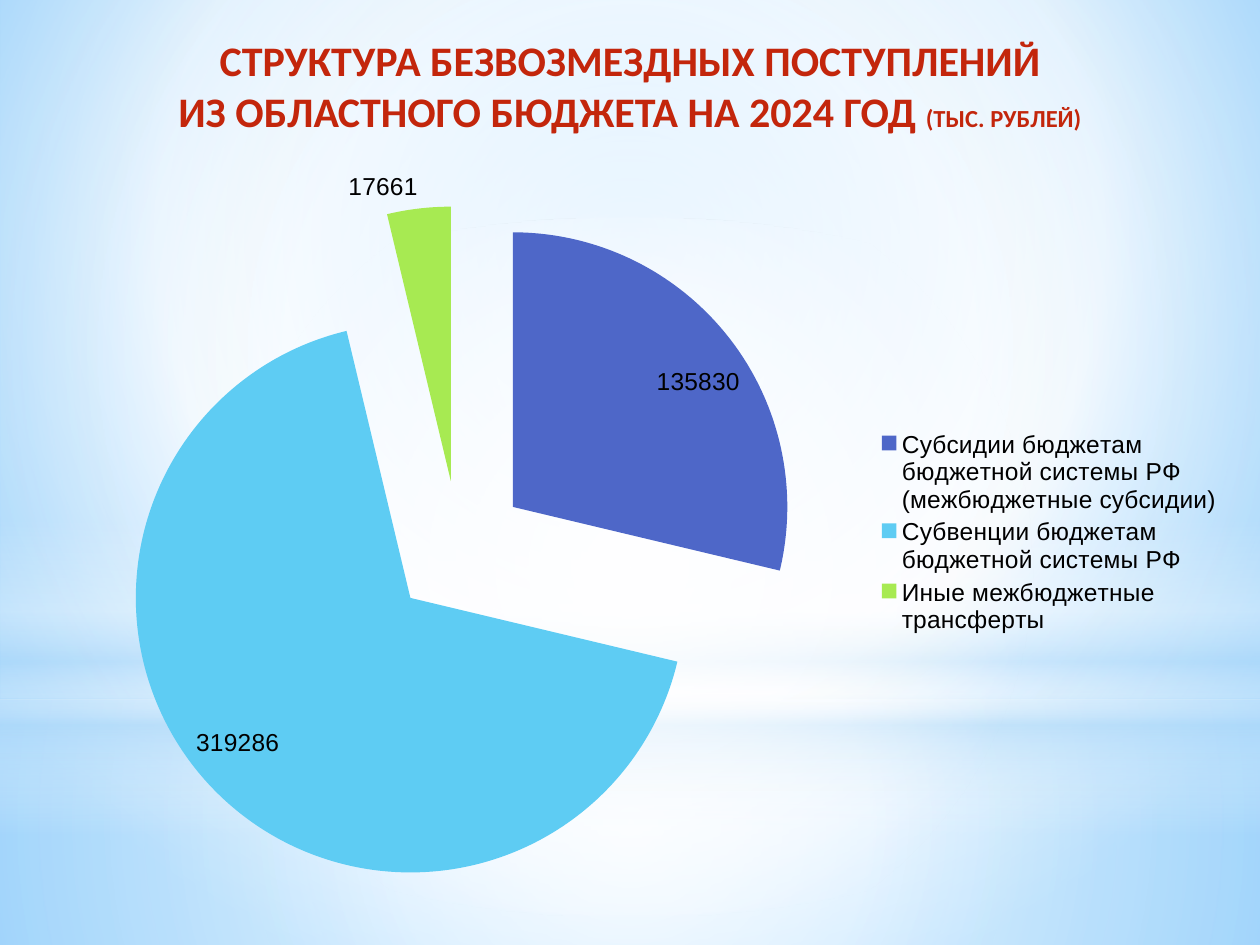
from dataclasses import dataclass
from lxml.etree import SubElement as Sub
from pptx import Presentation
from pptx.chart.data import CategoryChartData as Data
from pptx.dml.color import RGBColor as RGB
from pptx.enum.chart import XL_CHART_TYPE as Kind, XL_LABEL_POSITION as Spot
from pptx.enum.chart import XL_LEGEND_POSITION as Side
from pptx.enum.shapes import MSO_SHAPE as Form
from pptx.enum.text import MSO_ANCHOR as Anchor, MSO_AUTO_SIZE as Fit, PP_ALIGN as Align
from pptx.oxml import parse_xml
from pptx.oxml.ns import nsdecls, qn
from pptx.util import Inches, Pt


@dataclass(frozen=True)
class Theme:
    head: str = "Calibri"
    body: str = "Arial"
    red: str = "C3260C"
    ink: str = "000000"
    white: str = "FFFFFF"
    mist: str = "B4DCFA"
    sky: str = "9ED5FF"
    deep: str = "5BB9FF"
    slices: tuple = ("4E67C8", "5ECCF3", "A7EA52")
    big: int = 24
    base: int = 18
    small: int = 14


LOOK = Theme()
WIDE, HIGH = Inches(10), Inches(7.5)
MID = (50, 50, 50, 50)
SPLIT = 0.74


def place(box):
    x, y, w, h = box
    return [round(n) for n in (x * WIDE, y * HIGH, w * WIDE, h * HIGH)]


def blend(owner, stops, to=None):
    grad = parse_xml(f'<a:gradFill rotWithShape="1" {nsdecls("a")}/>')
    marks = Sub(grad, qn("a:gsLst"))
    for pos, color, *alpha in stops:
        stop = Sub(marks, qn("a:gs"), pos=str(pos * 1000))
        tone = Sub(stop, qn("a:srgbClr"), val=color)
        if alpha:
            Sub(tone, qn("a:alpha"), val=str(alpha[0] * 1000))
    if to:
        way = Sub(grad, qn("a:path"), {"path": "circle"})
        Sub(way, qn("a:fillToRect"), {k: str(v * 1000) for k, v in zip("ltrb", to)})
    else:
        Sub(grad, qn("a:lin"), ang="5400000", scaled="0")
    solid = owner.find(qn("a:solidFill"))
    owner.replace(solid, grad)


def style(font, size, name=LOOK.body, color=LOOK.ink, bold=False):
    font.size, font.name, font.bold = Pt(size), name, bold
    font.color.rgb = RGB.from_string(color)


def write(para, text, align=Align.CENTER, **form):
    para.alignment = align
    run = para.add_run()
    run.text = text
    style(run.font, **form)


def glow(slide, form, box, stops, to=None):
    shape = slide.shapes.add_shape(form, *place(box))
    shape.shadow.inherit = False
    shape.line.fill.background()
    shape.fill.solid()
    blend(shape.element.spPr, stops, to)


def scene(slide):
    white, mist = LOOK.white, LOOK.mist
    slide.background.fill.solid()
    blend(slide.element.find(".//" + qn("p:bgPr")),
          [(0, LOOK.sky), (60, white), (100, LOOK.deep)], (20, 10, 20, 60))
    glow(slide, Form.RECTANGLE, (0, SPLIT, 1, 1 - SPLIT),
         [(0, white, 91), (37, white, 76), (100, mist, 79)], MID)
    glow(slide, Form.RECTANGLE, (0, 0, 1, SPLIT),
         [(0, white, 89), (48, white, 62), (100, mist, 79)], MID)
    glow(slide, Form.RECTANGLE, (0, 0.55, 1, 1 / 3),
         [(0, white, 0), (29, white, 30), (45, mist, 40),
          (55, white, 26), (65, mist, 60), (100, white, 0)])
    glow(slide, Form.OVAL, (0, 0.23, 1, SPLIT),
         [(0, white), (56, white, 0)], MID)


def banner(slide, box):
    title = slide.shapes.title
    title.left, title.top, title.width, title.height = place(box)
    slide.shapes.element.append(title.element)
    frame = title.text_frame
    frame.word_wrap = True
    frame.auto_size = Fit.SHAPE_TO_FIT_TEXT
    frame.vertical_anchor = Anchor.TOP
    form = dict(name=LOOK.head, color=LOOK.red, bold=True)
    write(frame.paragraphs[0], "СТРУКТУРА БЕЗВОЗМЕЗДНЫХ ПОСТУПЛЕНИЙ", size=LOOK.big, **form)
    line = frame.add_paragraph()
    write(line, "ИЗ ОБЛАСТНОГО БЮДЖЕТА НА 2024 ГОД ", size=LOOK.big, **form)
    write(line, "(ТЫС. РУБЛЕЙ)", size=LOOK.small, **form)


def pie(slide, box):
    data = Data()
    data.categories = ["Субсидии бюджетам бюджетной системы РФ (межбюджетные субсидии)",
                       "Субвенции бюджетам бюджетной системы РФ",
                       "Иные межбюджетные трансферты"]
    data.add_series("Series 1", (135830, 319286, 17661))
    chart = slide.shapes.add_chart(Kind.PIE, *place(box), data).chart
    chart.has_title = False
    style(chart.font, LOOK.base)
    chart.has_legend = True
    chart.legend.position = Side.RIGHT
    chart.legend.include_in_layout = False
    style(chart.legend.font, LOOK.small)
    plot = chart.plots[0]
    plot.vary_by_categories = True
    row = plot.series[0]
    burst = parse_xml(f'<c:explosion val="25" {nsdecls("c")}/>')
    row._element.find(qn("c:tx")).addnext(burst)
    for i, color in enumerate(LOOK.slices):
        fill = row.points[i].format.fill
        fill.solid()
        fill.fore_color.rgb = RGB.from_string(color)
    tags = row.data_labels
    tags.show_value = True
    tags.position = Spot.BEST_FIT
    style(tags.font, LOOK.small)


def main():
    deck = Presentation()
    deck.slide_width, deck.slide_height = WIDE, HIGH
    slide = deck.slides.add_slide(deck.slide_layouts[5])
    scene(slide)
    banner(slide, (0.01, 0.03, 0.98, 0.12))
    pie(slide, (0.035, 0.164, 0.945, 0.799))
    deck.save("out.pptx")


if __name__ == "__main__":
    main()
